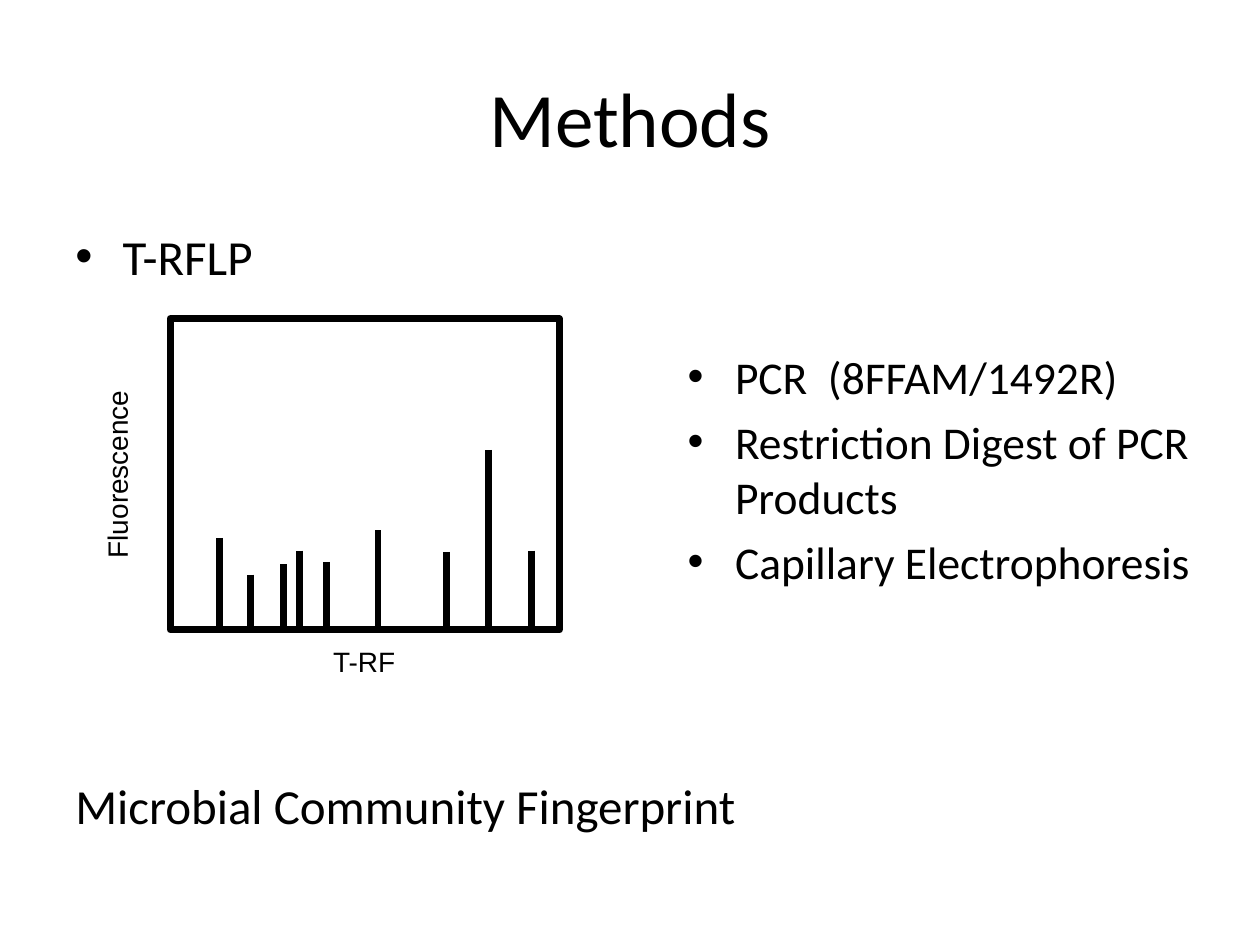
from lxml.etree import SubElement
from pptx import Presentation
from pptx.dml.color import RGBColor
from pptx.enum.shapes import MSO_CONNECTOR, MSO_SHAPE
from pptx.enum.text import MSO_ANCHOR, PP_ALIGN
from pptx.oxml.ns import qn
from pptx.util import Pt

BLACK = RGBColor(0, 0, 0)
LINE_WIDTH = Pt(4)
INDENT = 27

# lines, (left, top, width, height), font, size, options
TEXTS = [
    (["Methods"], (36, 21.6, 648, 90), "Calibri", 44,
     {"centred": True, "anchor": MSO_ANCHOR.MIDDLE}),
    (["PCR  (8FFAM/1492R)", "Restriction Digest of PCR Products",
      "Capillary Electrophoresis"],
     (385.92, 195.84, 318.24, 139.68), "Calibri", 26, {"bulleted": True}),
    (["T-RFLP"], (36, 126, 454, 45), "Calibri", 28, {"bulleted": True}),
    (["Microbial Community Fingerprint"],
     (36, 439.5, 454, 43), "Calibri", 28, {}),
    (["T-RF"], (131.04, 365.04, 154.08, 26.64), "Arial", 16,
     {"centred": True}),
    (["Fluorescence"], (-14.4, 257.76, 162.72, 26.64), "Arial", 16,
     {"centred": True, "rotation": 270}),
]

PLOT_FRAME = (97.2, 182.16, 222.48, 177.84)
# x, top, bottom of each fluorescence peak
PEAKS = [
    (125.28, 307.44, 359.28),
    (143.28, 328.32, 357.84),
    (162, 322.56, 359.28),
    (171.36, 314.64, 359.28),
    (186.48, 321.12, 361.44),
    (216, 303.12, 359.28),
    (254.88, 315.36, 359.28),
    (279.36, 257.04, 360.72),
    (303.84, 314.64, 359.28),
]


def add_bullet(para):
    properties = para._p.get_or_add_pPr()
    properties.set("marL", str(Pt(INDENT)))
    properties.set("indent", str(-Pt(INDENT)))
    SubElement(properties, qn("a:buFont"), typeface="Arial")
    SubElement(properties, qn("a:buChar"), char="•")


def add_text(page, lines, place, font, size, centred=False, bulleted=False,
             anchor=MSO_ANCHOR.TOP, rotation=0):
    box = page.shapes.add_textbox(*map(Pt, place))
    box.rotation = rotation
    frame = box.text_frame
    frame.word_wrap = True
    frame.vertical_anchor = anchor
    frame.text = "\n".join(lines)
    for index, para in enumerate(frame.paragraphs):
        para.alignment = PP_ALIGN.CENTER if centred else PP_ALIGN.LEFT
        para.font.name = font
        para.font.size = Pt(size)
        para.font.color.rgb = BLACK
        if index:
            para.space_before = Pt(6)
        if bulleted:
            add_bullet(para)


def draw_outline(line):
    line.color.rgb = BLACK
    line.width = LINE_WIDTH


def add_plot(page):
    frame = page.shapes.add_shape(MSO_SHAPE.RECTANGLE, *map(Pt, PLOT_FRAME))
    frame.shadow.inherit = False
    frame.fill.background()
    draw_outline(frame.line)
    for x, top, bottom in PEAKS:
        peak = page.shapes.add_connector(
            MSO_CONNECTOR.STRAIGHT, Pt(x), Pt(top), Pt(x), Pt(bottom))
        draw_outline(peak.line)
        SubElement(peak._element.spPr, qn("a:effectLst"))


def main():
    deck = Presentation()
    deck.slide_width, deck.slide_height = Pt(720), Pt(540)
    page = deck.slides.add_slide(deck.slide_layouts[6])
    add_plot(page)
    for lines, place, font, size, options in TEXTS:
        add_text(page, lines, place, font, size, **options)
    deck.save("out.pptx")


if __name__ == "__main__":
    main()
